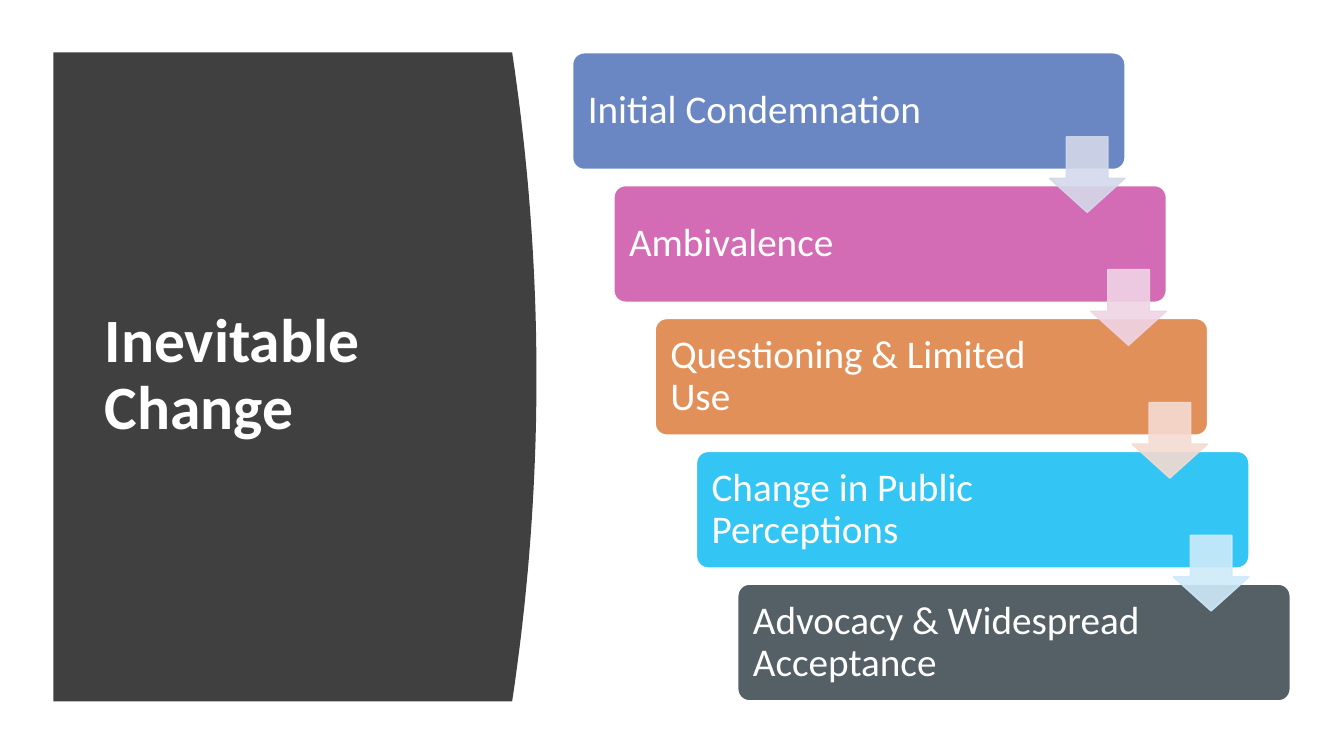
from dataclasses import dataclass

from lxml.etree import SubElement
from pptx import Presentation
from pptx.dml.color import RGBColor
from pptx.enum.shapes import MSO_SHAPE
from pptx.enum.text import MSO_ANCHOR, MSO_AUTO_SIZE, PP_ALIGN
from pptx.oxml.ns import qn
from pptx.util import Pt


@dataclass(frozen=True)
class Theme:
    font: str = "Calibri"
    title_size: int = 44
    card_size: int = 28
    white: str = "FFFFFF"
    panel: str = "404040"
    arrow_opacity: int = 90


THEME = Theme()

STAGES = [
    ("Initial Condemnation", "6A87C4", "D4D9EA"),
    ("Ambivalence", "D36CB4", "EFD4E5"),
    ("Questioning & Limited Use", "E29059", "F4DBD1"),
    ("Change in Public Perceptions", "33C5F3", "CEEAFA"),
    ("Advocacy & Widespread Acceptance", "545F66", None),
]

PANEL_LEFT, PANEL_TOP, PANEL_HEIGHT = 38.2, 37.4, 463.7
PANEL_EDGE, PANEL_BULGE, CURVE_STEPS = 365.8, 17.4, 40
CARD_LEFT, CARD_TOP, CARD_WIDTH, CARD_HEIGHT = 409, 37.7, 394.6, 83.3
STEP_X, STEP_Y = 29.5, 94.9
ARROW_LEFT, ARROW_TOP, ARROW_SIZE = 749.6, 97.7, 54


def paint(shape, fill, line):
    shape.shadow.inherit = False
    shape.fill.solid()
    shape.fill.fore_color.rgb = RGBColor.from_string(fill)
    if line is None:
        shape.line.fill.background()
    else:
        shape.line.color.rgb = RGBColor.from_string(line)
        shape.line.width = Pt(1)


def write(shape, text, size, space_after, bold=False):
    frame = shape.text_frame
    frame.word_wrap = True
    frame.auto_size = MSO_AUTO_SIZE.NONE
    frame.vertical_anchor = MSO_ANCHOR.MIDDLE
    para = frame.paragraphs[0]
    para.alignment = PP_ALIGN.LEFT
    para.line_spacing = 0.9
    para.space_before = Pt(0)
    para.space_after = Pt(space_after)
    span = para.add_run()
    span.text = text
    span.font.name = THEME.font
    span.font.size = Pt(size)
    span.font.bold = bold
    span.font.color.rgb = RGBColor.from_string(THEME.white)


def add_panel(page):
    curve = []
    for step in range(CURVE_STEPS + 1):
        progress = step / CURVE_STEPS
        bulge = PANEL_BULGE * (1 - (2 * progress - 1) ** 2)
        curve.append((Pt(PANEL_EDGE + bulge), Pt(PANEL_TOP + PANEL_HEIGHT * progress)))
    builder = page.shapes.build_freeform(Pt(PANEL_LEFT), Pt(PANEL_TOP))
    builder.add_line_segments(curve + [(Pt(PANEL_LEFT), Pt(PANEL_TOP + PANEL_HEIGHT))])
    panel = builder.convert_to_shape()
    paint(panel, THEME.panel, None)
    page.shapes.title._element.addprevious(panel._element)


def add_title(page, text):
    title = page.shapes.title
    title.left, title.top = Pt(67.7), Pt(80)
    title.width, title.height = Pt(269.3), Pt(377.3)
    write(title, text, THEME.title_size, 6, bold=True)


def add_card(page, index, text, fill):
    card = page.shapes.add_shape(
        MSO_SHAPE.ROUNDED_RECTANGLE,
        Pt(CARD_LEFT + index * STEP_X),
        Pt(CARD_TOP + index * STEP_Y),
        Pt(CARD_WIDTH),
        Pt(CARD_HEIGHT),
    )
    card.adjustments[0] = 0.1
    paint(card, fill, THEME.white)
    frame = card.text_frame
    frame.margin_left = frame.margin_top = frame.margin_bottom = Pt(8.4)
    frame.margin_right = Pt(92)
    write(card, text, THEME.card_size, 0)


def add_arrow(page, index, color):
    arrow = page.shapes.add_shape(
        MSO_SHAPE.DOWN_ARROW,
        Pt(ARROW_LEFT + index * STEP_X),
        Pt(ARROW_TOP + index * STEP_Y),
        Pt(ARROW_SIZE),
        Pt(ARROW_SIZE),
    )
    arrow.adjustments[0] = 0.55
    arrow.adjustments[1] = 0.45
    paint(arrow, color, color)
    for tint in arrow._element.spPr.iter(qn("a:srgbClr")):
        SubElement(tint, qn("a:alpha")).set("val", str(THEME.arrow_opacity * 1000))


def main():
    deck = Presentation()
    deck.slide_width, deck.slide_height = Pt(960), Pt(540)
    page = deck.slides.add_slide(deck.slide_layouts[5])
    add_panel(page)
    add_title(page, "Inevitable Change")
    for index, (text, fill, _) in enumerate(STAGES):
        add_card(page, index, text, fill)
    for index, (_, _, color) in enumerate(STAGES[:-1]):
        add_arrow(page, index, color)
    deck.save("out.pptx")


if __name__ == "__main__":
    main()
